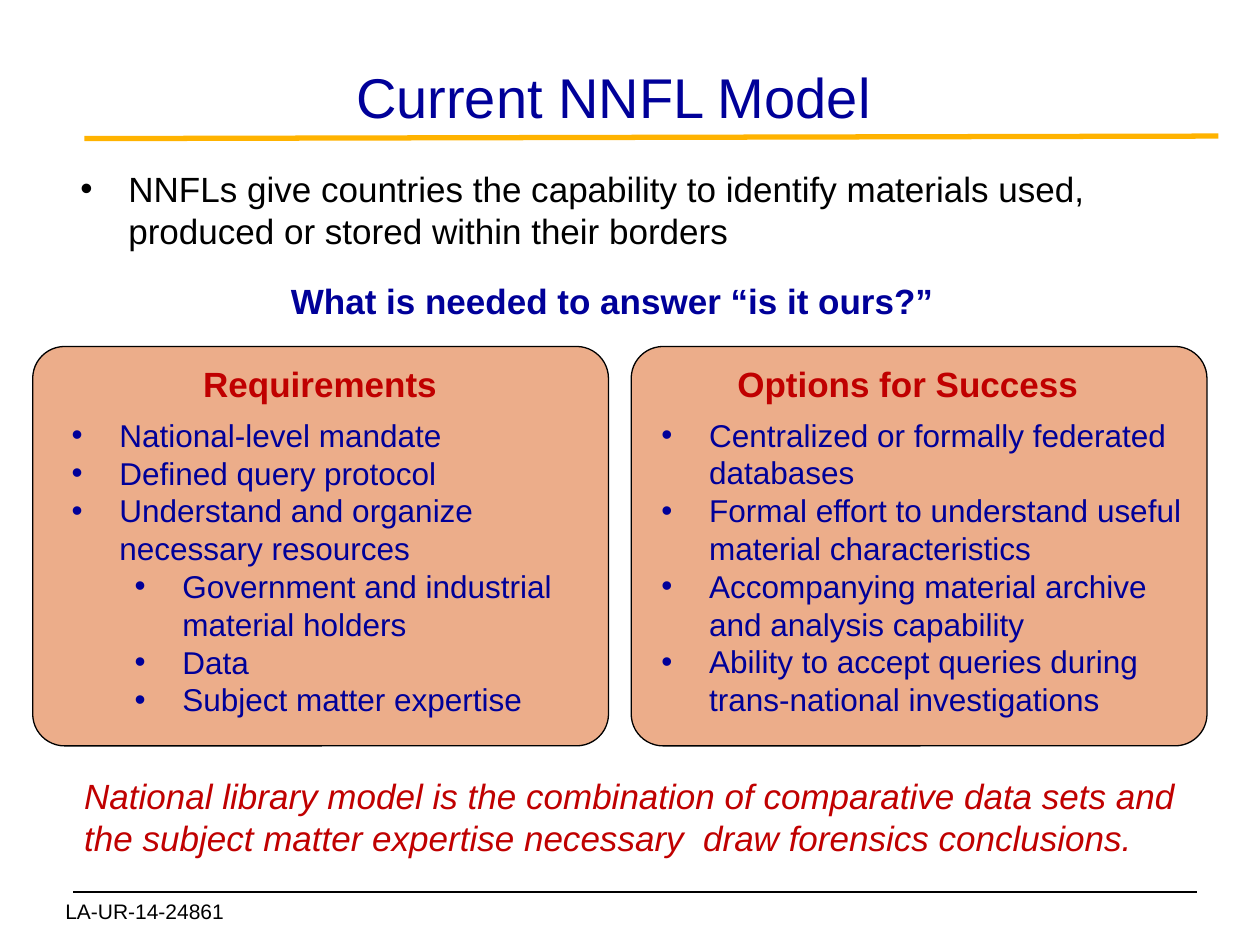
from dataclasses import dataclass

from lxml import etree
from pptx import Presentation
from pptx.dml.color import RGBColor
from pptx.enum.shapes import MSO_CONNECTOR, MSO_SHAPE
from pptx.enum.text import MSO_ANCHOR, MSO_AUTO_SIZE, PP_ALIGN
from pptx.oxml.ns import qn
from pptx.util import Inches, Pt


@dataclass(frozen=True)
class Theme:
    font: str = "Arial"
    black: str = "000000"
    navy: str = "000099"
    red: str = "C00000"
    gold: str = "FFB300"
    peach: str = "ECAD8A"
    title_size: int = 32
    text_size: int = 20
    list_size: int = 18
    footer_size: int = 12
    indent: float = 0.38
    level_step: float = 0.5


theme = Theme()
presentation = Presentation()
presentation.slide_width = Inches(10)
presentation.slide_height = Inches(7.5)
slide = presentation.slides.add_slide(presentation.slide_layouts[6])


def add_text(box, items, size, color, align=PP_ALIGN.LEFT, bullets=False, bold=False, italic=False):
    """Add a text box; each item is a (level, text) pair."""
    text_frame = slide.shapes.add_textbox(*map(Inches, box)).text_frame
    text_frame.word_wrap = True
    text_frame.auto_size = MSO_AUTO_SIZE.NONE
    for index, (level, text) in enumerate(items):
        paragraph = text_frame.paragraphs[0] if index == 0 else text_frame.add_paragraph()
        paragraph.text = text
        paragraph.level = level
        paragraph.alignment = align
        if bullets:
            properties = paragraph._p.get_or_add_pPr()
            properties.set("marL", str(Inches(theme.indent + level * theme.level_step)))
            properties.set("indent", str(-Inches(theme.indent)))
            etree.SubElement(properties, qn("a:buFont"), typeface=theme.font)
            etree.SubElement(properties, qn("a:buChar"), char="•")
        font = paragraph.runs[0].font
        font.name, font.size = theme.font, Pt(size)
        font.bold, font.italic = bold, italic
        font.color.rgb = RGBColor.from_string(color)
    return text_frame


# Footer rule and title rule
for start_x, start_y, end_x, end_y, color, width in [
    (0.58, 7.08, 9.5, 7.08, theme.black, 0.75),
    (0.67, 1.1, 9.67, 1.08, theme.gold, 3),
]:
    rule = slide.shapes.add_connector(
        MSO_CONNECTOR.STRAIGHT, Inches(start_x), Inches(start_y), Inches(end_x), Inches(end_y))
    rule.line.color.rgb = RGBColor.from_string(color)
    rule.line.width = Pt(width)
    etree.SubElement(rule._element.spPr, qn("a:effectLst"))

add_text((0.42, 7.08, 2, 0.4), [(0, "LA-UR-14-24861")], theme.footer_size, theme.black)

title = add_text((0.33, 0.42, 9.08, 0.75), [(0, "Current NNFL Model")],
                 theme.title_size, theme.navy, PP_ALIGN.CENTER)
title.vertical_anchor = MSO_ANCHOR.MIDDLE
title.margin_bottom = Inches(0.12)

introduction = add_text(
    (0.54, 1.25, 9.12, 1.75),
    [(0, "NNFLs give countries the capability to identify materials used, "
         "produced or stored within their borders")],
    theme.text_size, theme.black, bullets=True)
introduction.margin_top = Inches(0.08)

add_text((0.47, 2.17, 8.78, 0.44), [(0, "What is needed to answer “is it ours?”")],
         theme.text_size, theme.navy, PP_ALIGN.CENTER, bold=True)

# Panels: left edge, heading box, list box, heading, list items
panels = [
    (0.26, (0.83, 2.83, 3.42, 0.44), (0.47, 3.25, 4.27, 2.52), "Requirements", [
        (0, "National-level mandate"),
        (0, "Defined query protocol"),
        (0, "Understand and organize necessary resources"),
        (1, "Government and industrial material holders"),
        (1, "Data"),
        (1, "Subject matter expertise"),
    ]),
    (5.01, (5.33, 2.83, 3.75, 0.44), (5.15, 3.25, 4.43, 2.86), "Options for Success", [
        (0, "Centralized or formally federated databases"),
        (0, "Formal effort to understand useful material characteristics"),
        (0, "Accompanying material archive and analysis capability"),
        (0, "Ability to accept queries during trans-national investigations"),
    ]),
]
for left, heading_box, list_box, heading, items in panels:
    panel = slide.shapes.add_shape(
        MSO_SHAPE.ROUNDED_RECTANGLE, Inches(left), Inches(2.75), Inches(4.57), Inches(3.17))
    panel.adjustments[0] = 0.08
    panel.shadow.inherit = False
    panel.fill.solid()
    panel.fill.fore_color.rgb = RGBColor.from_string(theme.peach)
    panel.line.color.rgb = RGBColor.from_string(theme.black)
    panel.line.width = Pt(0.75)
    add_text(heading_box, [(0, heading)], theme.text_size, theme.red, PP_ALIGN.CENTER, bold=True)
    add_text(list_box, items, theme.list_size, theme.navy, bullets=True)

add_text(
    (0.57, 6.1, 9.17, 0.85),
    [(0, "National library model is the combination of comparative data sets and "
         "the subject matter expertise necessary  draw forensics conclusions.")],
    theme.text_size, theme.red, italic=True)

presentation.save("out.pptx")
